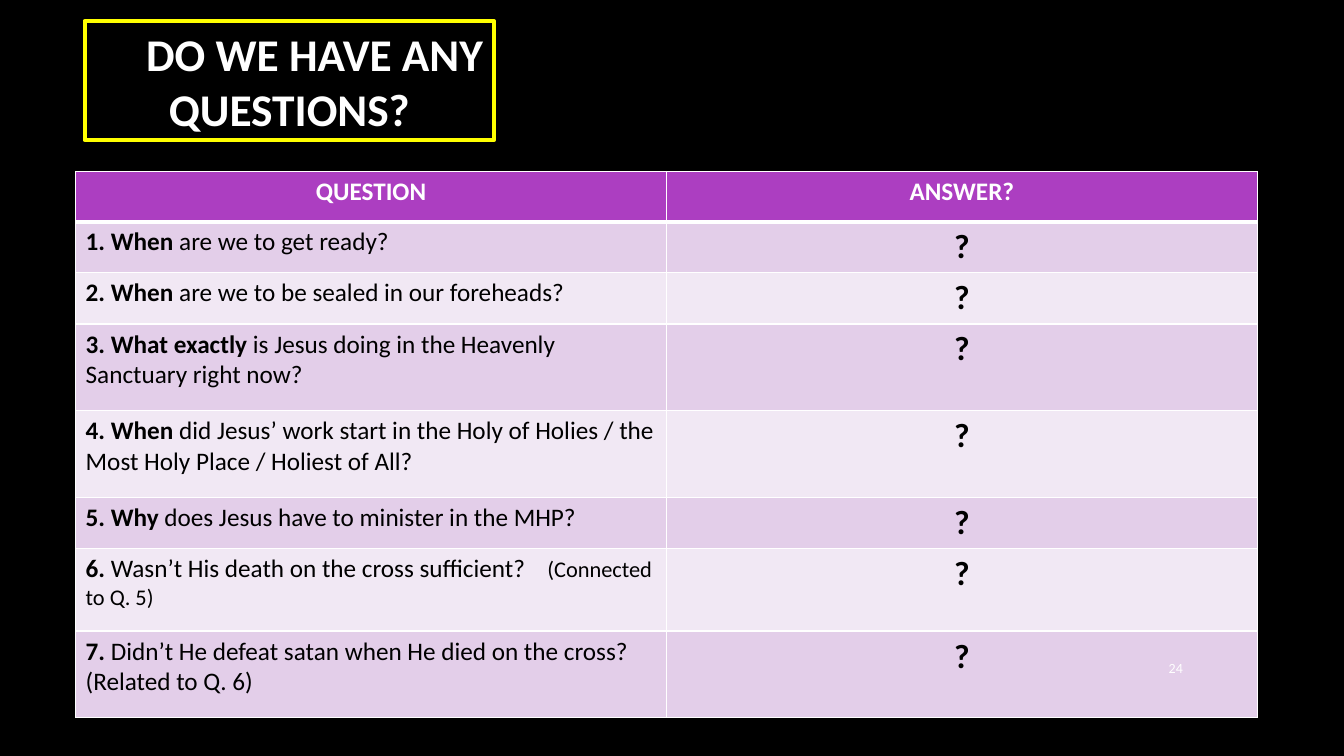
from dataclasses import dataclass

from lxml.etree import SubElement
from pptx import Presentation
from pptx.dml.color import RGBColor
from pptx.enum.shapes import MSO_SHAPE
from pptx.enum.text import MSO_ANCHOR, PP_ALIGN
from pptx.oxml.ns import qn
from pptx.util import Inches, Pt

COLORS = {
    "black": "000000",
    "white": "FFFFFF",
    "yellow": "FFFF00",
    "header": "AC3EC1",
    "odd_row": "E3CEE9",
    "even_row": "F1E8F4",
}
FONT = "Calibri"
COLUMN_WIDTH = 5.86
HEADER_HEIGHT = 0.5


@dataclass(frozen=True)
class Span:
    text: str
    size: float = 18
    bold: bool = False
    color: str = "black"


@dataclass(frozen=True)
class Question:
    lead: str
    rest: str
    height: float = 0.5
    note: str = ""


QUESTIONS = [
    Question("1. When", " are we to get ready?"),
    Question("2. When", " are we to be sealed in our foreheads?"),
    Question("3. What exactly", " is Jesus doing in the Heavenly Sanctuary right now?", 0.86),
    Question(
        "4. When",
        " did Jesus’ work start in the Holy of Holies / the Most Holy Place / Holiest of All?",
        0.86,
    ),
    Question("5. Why", " does Jesus have to minister in the MHP?"),
    Question("6.", " Wasn’t His death on the cross sufficient?", 0.82, "(Connected to Q. 5)"),
    Question("7.", " Didn’t He defeat satan when He died on the cross? (Related to Q. 6)", 0.86),
]


def rgb(name: str) -> RGBColor:
    return RGBColor.from_string(COLORS[name])


def write(paragraph, spans: list[Span], alignment=PP_ALIGN.LEFT) -> None:
    paragraph.alignment = alignment
    for span in spans:
        run = paragraph.add_run()
        run.text = span.text
        run.font.name = FONT
        run.font.size = Pt(span.size)
        run.font.bold = span.bold
        run.font.color.rgb = rgb(span.color)


def add_tab_stop(paragraph, position: float) -> None:
    tab_list = SubElement(paragraph._p.get_or_add_pPr(), qn("a:tabLst"))
    SubElement(tab_list, qn("a:tab"), pos=str(Inches(position)), algn="l")


def style_cell(cell, fill: str, top: float = 1, bottom: float = 1) -> None:
    properties = cell._tc.get_or_add_tcPr()
    for side, width in (("L", 1), ("R", 1), ("T", top), ("B", bottom)):
        border = SubElement(properties, qn(f"a:ln{side}"), w=str(Pt(width)))
        border_fill = SubElement(border, qn("a:solidFill"))
        SubElement(border_fill, qn("a:srgbClr"), val=COLORS["white"])
    cell.fill.solid()
    cell.fill.fore_color.rgb = rgb(fill)


def add_title(slide) -> None:
    shape = slide.shapes.add_shape(
        MSO_SHAPE.RECTANGLE, Inches(0.84), Inches(0.21), Inches(4.06), Inches(1.18)
    )
    shape.shadow.inherit = False
    shape.fill.solid()
    shape.fill.fore_color.rgb = rgb("black")
    shape.line.color.rgb = rgb("yellow")
    shape.line.width = Pt(3)
    shape.text_frame.word_wrap = True
    shape.text_frame.vertical_anchor = MSO_ANCHOR.MIDDLE
    paragraph = shape.text_frame.paragraphs[0]
    paragraph._p.get_or_add_pPr().set("defTabSz", str(Inches(0.5)))
    write(
        paragraph,
        [Span("\tDO WE HAVE ANY QUESTIONS?", 32.4, True, "white")],
        PP_ALIGN.CENTER,
    )


def add_question_table(slide) -> None:
    heights = [HEADER_HEIGHT] + [question.height for question in QUESTIONS]
    table = slide.shapes.add_table(
        len(heights), 2, Inches(0.75), Inches(1.7), Inches(2 * COLUMN_WIDTH), Inches(sum(heights))
    ).table
    table.horz_banding = False
    for column in table.columns:
        column.width = Inches(COLUMN_WIDTH)
    for row, height in zip(table.rows, heights):
        row.height = Inches(height)

    for index, heading in enumerate(("QUESTION", "ANSWER?")):
        cell = table.cell(0, index)
        style_cell(cell, "header", bottom=3)
        write(
            cell.text_frame.paragraphs[0],
            [Span(heading, bold=True, color="white")],
            PP_ALIGN.CENTER,
        )

    for number, question in enumerate(QUESTIONS, start=1):
        question_cell, answer_cell = table.rows[number].cells
        for cell in (question_cell, answer_cell):
            style_cell(
                cell, "odd_row" if number % 2 else "even_row", top=3 if number == 1 else 1
            )
        paragraph = question_cell.text_frame.paragraphs[0]
        spans = [Span(question.lead, bold=True), Span(question.rest)]
        if question.note:
            add_tab_stop(paragraph, 4.58)
            spans.append(Span("\t" + question.note, 16))
        write(paragraph, spans)
        write(answer_cell.text_frame.paragraphs[0], [Span("?", 24, True)], PP_ALIGN.CENTER)


def add_page_number(slide) -> None:
    shape = slide.shapes.add_textbox(Inches(11.23), Inches(6.42), Inches(0.6), Inches(0.41))
    shape.text_frame.word_wrap = True
    shape.text_frame.vertical_anchor = MSO_ANCHOR.MIDDLE
    write(shape.text_frame.paragraphs[0], [Span("24", 10, color="white")], PP_ALIGN.RIGHT)


def main() -> None:
    presentation = Presentation()
    presentation.slide_width = Inches(13.33)
    presentation.slide_height = Inches(7.5)
    slide = presentation.slides.add_slide(presentation.slide_layouts[6])
    slide.background.fill.solid()
    slide.background.fill.fore_color.rgb = rgb("black")
    add_title(slide)
    add_question_table(slide)
    add_page_number(slide)
    presentation.save("out.pptx")


if __name__ == "__main__":
    main()
